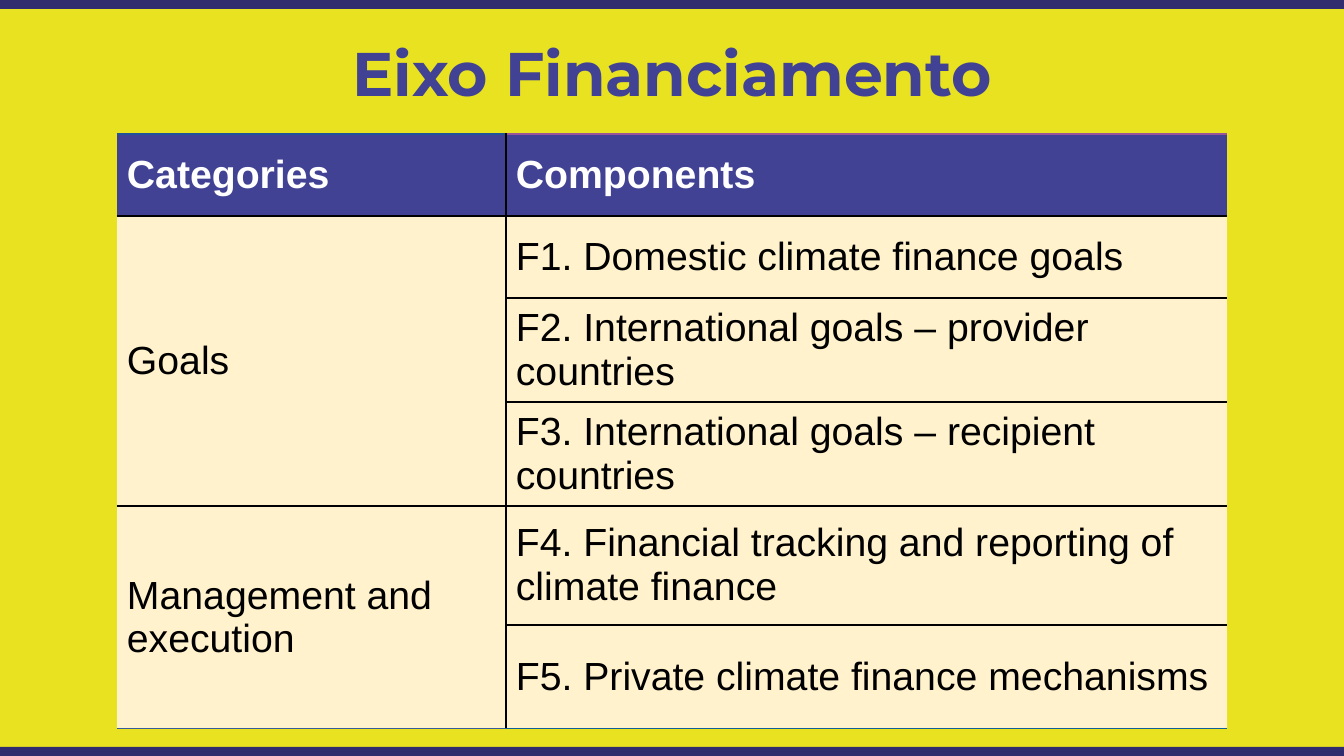
from lxml.etree import SubElement
from pptx import Presentation
from pptx.dml.color import RGBColor
from pptx.enum.shapes import MSO_SHAPE
from pptx.enum.text import MSO_ANCHOR, PP_ALIGN
from pptx.oxml.ns import qn
from pptx.util import Emu, Pt

PX = 914400 / 134.4
COLORS = {
    "yellow": "E8E221",
    "navy": "302C6E",
    "indigo": "414294",
    "cream": "FFF2CC",
    "white": "FFFFFF",
    "black": "000000",
}
COLUMN_WIDTHS = [389, 721]
ROW_HEIGHTS = [82, 82, 104, 104, 119, 104]
ROWS = [
    ("Categories", "Components"),
    ("Goals", "F1. Domestic climate finance goals"),
    ("", "F2. International goals – provider countries"),
    ("", "F3. International goals – recipient countries"),
    ("Management and execution", "F4. Financial tracking and reporting of climate finance"),
    ("", "F5. Private climate finance mechanisms"),
]
TOP_EDGES = ["205398", "985698"]
BOTTOM_EDGES = ["385C98", "106098"]


def px(length):
    return Emu(round(length * PX))


def add_border(cell, side, color, width=1):
    line = SubElement(cell._tc.get_or_add_tcPr(), qn(f"a:ln{side}"), w=str(Pt(width)))
    if color is None:
        SubElement(line, qn("a:noFill"))
    else:
        fill = SubElement(line, qn("a:solidFill"))
        SubElement(fill, qn("a:srgbClr"), val=color)


deck = Presentation()
deck.slide_width, deck.slide_height = px(1344), px(756)
page = deck.slides.add_slide(deck.slide_layouts[5])

for top, height, color in [(0, 756, "yellow"), (747, 9, "navy"), (0, 9, "navy")]:
    band = page.shapes.add_shape(MSO_SHAPE.RECTANGLE, 0, px(top), px(1344), px(height))
    band.shadow.inherit = False
    band.fill.solid()
    band.fill.fore_color.rgb = RGBColor.from_string(COLORS[color])
    band.line.fill.background()

title = page.shapes.title
page.shapes._spTree.append(title._element)
title.left, title.top, title.width, title.height = px(0), px(27), px(1344), px(89)
title.text_frame.text = "Eixo Financiamento"
title.text_frame.vertical_anchor = MSO_ANCHOR.MIDDLE
paragraph = title.text_frame.paragraphs[0]
paragraph.alignment = PP_ALIGN.CENTER
font = paragraph.runs[0].font
font.name, font.size, font.bold = "Montserrat", Pt(33), True
font.color.rgb = RGBColor.from_string(COLORS["indigo"])

table = page.shapes.add_table(
    len(ROWS), len(COLUMN_WIDTHS), px(117), px(134), px(sum(COLUMN_WIDTHS)), px(sum(ROW_HEIGHTS))
).table
table.horz_banding = False
for column, width in zip(table.columns, COLUMN_WIDTHS):
    column.width = px(width)
for row, height in zip(table.rows, ROW_HEIGHTS):
    row.height = px(height)
table.cell(1, 0).merge(table.cell(3, 0))
table.cell(4, 0).merge(table.cell(5, 0))

last = len(ROWS) - 1
for r, texts in enumerate(ROWS):
    for c, text in enumerate(texts):
        cell = table.cell(r, c)
        header = r == 0
        black = COLORS["black"]
        add_border(cell, "L", black if c == 1 else None)
        add_border(cell, "R", black if c == 0 else None)
        if header:
            add_border(cell, "T", TOP_EDGES[c], 0.75)
        else:
            add_border(cell, "T", black if text else None)
        if r == last or (c == 0 and r == 4):
            add_border(cell, "B", BOTTOM_EDGES[c], 0.75)
        else:
            ends_group = c == 1 or r in (0, 1, 3)
            add_border(cell, "B", black if ends_group else None)
        cell.fill.solid()
        cell.fill.fore_color.rgb = RGBColor.from_string(COLORS["indigo" if header else "cream"])
        cell.vertical_anchor = MSO_ANCHOR.MIDDLE
        cell.margin_left = cell.margin_right = px(10)
        cell.margin_top = cell.margin_bottom = px(5)
        if text:
            cell.text_frame.text = text
            font = cell.text_frame.paragraphs[0].runs[0].font
            font.name, font.size, font.bold = "Arial", Pt(21), header
            font.color.rgb = RGBColor.from_string(COLORS["white" if header else "black"])

deck.save("out.pptx")
